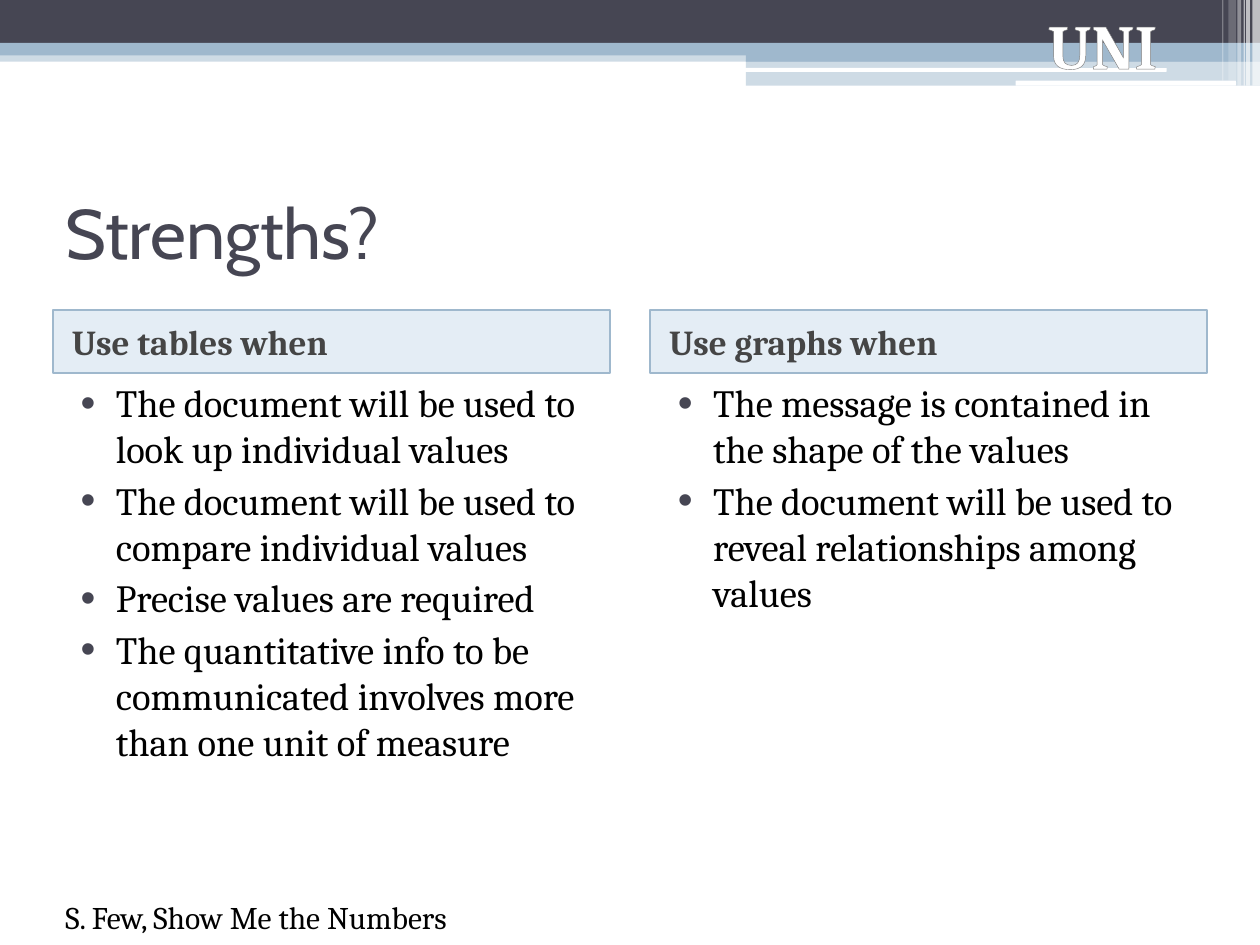
from lxml import etree
from pptx import Presentation
from pptx.dml.color import RGBColor
from pptx.enum.shapes import MSO_SHAPE
from pptx.enum.text import MSO_ANCHOR, MSO_AUTO_SIZE, PP_ALIGN
from pptx.oxml.ns import qn
from pptx.util import Emu, Inches, Pt

RECT, ROUND = MSO_SHAPE.RECTANGLE, MSO_SHAPE.ROUNDED_RECTANGLE
LEFT, CENTER = PP_ALIGN.LEFT, PP_ALIGN.CENTER
TOP, MIDDLE = MSO_ANCHOR.TOP, MSO_ANCHOR.MIDDLE

SLATE = RGBColor(0x46, 0x46, 0x53)
BLUE = RGBColor(0x9F, 0xB8, 0xCD)
HEADER_BLUE = RGBColor(0x94, 0xB9, 0xD8)
HEADER_TEXT = RGBColor(0x45, 0x45, 0x45)
GRAY = RGBColor(0x7D, 0x7D, 0x7D)
WHITE = RGBColor(0xFF, 0xFF, 0xFF)
BLACK = RGBColor(0, 0, 0)
HEADING_FONT, BODY_FONT = "Cabin", "Cambria"

TITLE = "Strengths?"
COLUMNS = [
    ("Use tables when", [
        "The document will be used to look up individual values",
        "The document will be used to compare individual values",
        "Precise values are required",
        "The quantitative info to be communicated involves more than one unit of measure",
    ]),
    ("Use graphs when", [
        "The message is contained in the shape of the values",
        "The document will be used to reveal relationships among values",
    ]),
]
SOURCE = "S. Few, Show Me the Numbers"
BADGE = "UNI"

# Banner parts: shape, left, top, width, height, colour, opacity in percent
BANDS = [
    (RECT, 0, 0.4, 10, 0.09, BLUE, 50),
    (RECT, 0, 0, 10, 0.34, SLATE, 100),
    (RECT, 0, 0.34, 10, 0.1, BLUE, 100),
    (RECT, 5.92, 0.39, 4.08, 0.1, BLUE, 100),
    (RECT, 5.92, 0.48, 4.08, 0.2, BLUE, 50),
    (ROUND, 5.91, 0.54, 3.35, 0.03, WHITE, 100),
    (ROUND, 8.06, 0.64, 1.75, 0.04, WHITE, 100),
]
# Stripes at the banner's right end: left, width, height, opacity in percent
STRIPES = [
    (9.94, 0.06, 0.68, 65), (9.89, 0.03, 0.68, 65), (9.87, 0.01, 0.68, 60),
    (9.82, 0.03, 0.68, 40), (9.75, 0.06, 0.64, 20), (9.7, 0.01, 0.64, 30),
]

MARGIN, COLUMN_W, GAP = 0.42, 4.42, 0.32
HEADER_TOP, HEADER_H, LIST_H = 2.46, 0.5, 4.25


def place(shape, x, y, w, h):
    shape.left, shape.top = Inches(x), Inches(y)
    shape.width, shape.height = Inches(w), Inches(h)


def set_fill(shape, color, opacity=100):
    shape.fill.solid()
    shape.fill.fore_color.rgb = color
    if opacity < 100:
        clr = shape.fill._xPr.find(qn("a:solidFill"))[0]
        etree.SubElement(clr, qn("a:alpha"), val=str(opacity * 1000))


def add_band(s, kind, x, y, w, h, color, opacity):
    band = s.shapes.add_shape(kind, Inches(x), Inches(y), Inches(w), Inches(h))
    band.shadow.inherit = False
    set_fill(band, color, opacity)
    band.line.fill.background()


def write(shape, lines, size, color, font=BODY_FONT, bold=False,
          anchor=TOP, align=LEFT, before=0):
    """Fill the shape with one paragraph per line and return its paragraphs."""
    tf = shape.text_frame
    tf.word_wrap = True
    tf.auto_size = MSO_AUTO_SIZE.NONE
    tf.vertical_anchor = anchor
    for i, line in enumerate(lines):
        p = tf.add_paragraph() if i else tf.paragraphs[0]
        p.alignment = align
        p.space_before = Pt(before)
        r = p.add_run()
        r.text = line
        r.font.name, r.font.size, r.font.bold = font, Pt(size), bold
        r.font.color.rgb = color
    return tf.paragraphs


def indent(p, left, first=0.0):
    pPr = p._p.get_or_add_pPr()
    pPr.set("marL", str(Inches(left)))
    pPr.set("indent", str(Inches(first)))
    return pPr


def add_bullet(p):
    pPr = indent(p, 0.4, -0.28)
    color = etree.SubElement(pPr, qn("a:buClr"))
    etree.SubElement(color, qn("a:srgbClr"), val=str(SLATE))
    etree.SubElement(pPr, qn("a:buSzPct"), val="110000")
    etree.SubElement(pPr, qn("a:buFont"), typeface="Arial")
    etree.SubElement(pPr, qn("a:buChar"), char="•")


def outline_text(r, color, width):
    ln = etree.Element(qn("a:ln"), w=str(Emu(Pt(width))))
    fill = etree.SubElement(ln, qn("a:solidFill"))
    etree.SubElement(fill, qn("a:srgbClr"), val=str(color))
    r.font._element.insert(0, ln)


def add_text(s, x, y, w, h):
    return s.shapes.add_textbox(Inches(x), Inches(y), Inches(w), Inches(h))


def main():
    prs = Presentation()
    prs.slide_width, prs.slide_height = Inches(10), Inches(7.5)
    s = prs.slides.add_slide(prs.slide_layouts.get_by_name("Comparison"))

    for band in BANDS:
        add_band(s, *band)
    for x, w, h, opacity in STRIPES:
        add_band(s, RECT, x, 0, w, h, WHITE, opacity)
    badge = write(add_text(s, 8, 0, 1.5, 0.71), [BADGE], 36, WHITE,
                  bold=True, align=CENTER)
    outline_text(badge[0].runs[0], GRAY, 0.83)

    title = s.shapes.title
    place(title, MARGIN, 1.25, 2 * COLUMN_W + GAP, 1.17)
    write(title, [TITLE], 40, SLATE, HEADING_FONT, anchor=MIDDLE)

    for i, (heading, points) in enumerate(COLUMNS):
        x = MARGIN + i * (COLUMN_W + GAP)
        header, body = s.placeholders[2 * i + 1], s.placeholders[2 * i + 2]

        place(header, x, HEADER_TOP, COLUMN_W, HEADER_H)
        set_fill(header, HEADER_BLUE, 25)
        header.line.color.rgb = BLUE
        header.line.width = Pt(1)
        for p in write(header, [heading], 20, HEADER_TEXT, bold=True,
                       anchor=MIDDLE, before=3):
            indent(p, 0.05)

        place(body, x, HEADER_TOP + HEADER_H, COLUMN_W, LIST_H)
        for p in write(body, points, 22, BLACK, before=3):
            add_bullet(p)

    write(add_text(s, MARGIN, 7.08, 9, 0.4), [SOURCE], 18, BLACK)
    prs.save("out.pptx")


if __name__ == "__main__":
    main()
